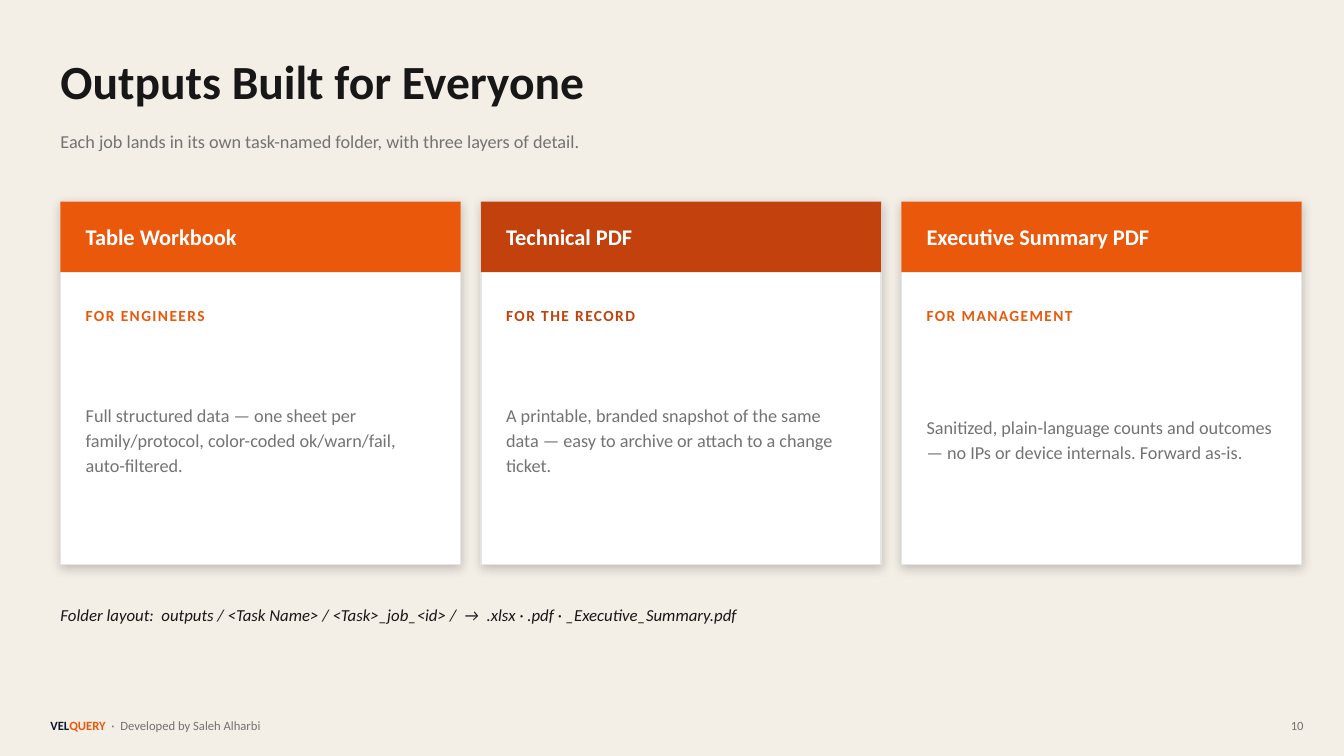
from pptx import Presentation
from pptx.dml.color import RGBColor
from pptx.enum.shapes import MSO_SHAPE
from pptx.enum.text import MSO_ANCHOR, MSO_AUTO_SIZE, PP_ALIGN
from pptx.oxml import parse_xml
from pptx.oxml.ns import nsdecls
from pptx.util import Emu, Pt

PX = 9144  # 100 px to the inch
FONT = "Calibri"
COLORS = {
    "page": "F3EEE6", "ink": "171717", "grey": "737373", "white": "FFFFFF",
    "border": "E5E5E5", "orange": "EA580C", "rust": "C2410C", "navy": "0F172A",
}
SHADOW = (
    f'<a:outerShdw {nsdecls("a")} blurRad="{Pt(8)}" dist="{Pt(2)}" dir="5400000" '
    'algn="ctr" rotWithShape="0"><a:srgbClr val="000000"><a:alpha val="20000"/>'
    "</a:srgbClr></a:outerShdw>"
)

deck = Presentation()
deck.slide_width, deck.slide_height = Emu(1333 * PX), Emu(750 * PX)
page = deck.slides.add_slide(deck.slide_layouts[5])
page.background.fill.solid()
page.background.fill.fore_color.rgb = RGBColor.from_string(COLORS["page"])


def add_text(text, left, top, width, height, size, color="grey", box=None, bold=False,
             italic=False, align=PP_ALIGN.LEFT, line_spacing=None, tracking=None):
    """Write text, given as a string or as (text, color, bold) spans."""
    area = [Emu(length * PX) for length in (left, top, width, height)]
    if box is None:
        box = page.shapes.add_textbox(*area)
    box.left, box.top, box.width, box.height = area
    frame = box.text_frame
    frame.word_wrap = True
    frame.auto_size = MSO_AUTO_SIZE.NONE
    frame.vertical_anchor = MSO_ANCHOR.MIDDLE
    frame.margin_left = frame.margin_top = frame.margin_right = frame.margin_bottom = 0
    para = frame.paragraphs[0]
    para.alignment = align
    if line_spacing:
        para.line_spacing = line_spacing
    spans = [(text, color, bold)] if isinstance(text, str) else text
    for words, span_color, span_bold in spans:
        span = para.add_run()
        span.text = words
        span.font.name = FONT
        span.font.size = Pt(size)
        span.font.bold = span_bold
        span.font.italic = italic
        span.font.color.rgb = RGBColor.from_string(COLORS[span_color])
        if tracking:
            span.font._element.set("spc", str(tracking))


def add_panel(left, top, width, height, fill, border=None):
    """Draw a rectangle; a bordered one also casts a soft shadow."""
    panel = page.shapes.add_shape(
        MSO_SHAPE.RECTANGLE, *[Emu(length * PX) for length in (left, top, width, height)])
    panel.shadow.inherit = False
    panel.fill.solid()
    panel.fill.fore_color.rgb = RGBColor.from_string(COLORS[fill])
    if border:
        panel.line.color.rgb = RGBColor.from_string(COLORS[border])
        panel.line.width = Pt(1)
        panel._element.spPr.find("{*}effectLst").append(parse_xml(SHADOW))
    else:
        panel.line.fill.background()


# Heading
add_text("Outputs Built for Everyone", 60, 45, 1100, 70, 34, "ink",
         box=page.shapes.title, bold=True)
add_text("Each job lands in its own task-named folder, with three layers of detail.",
         60, 120, 1100, 40, 13)

# Output cards
CARD_WIDTH, GAP, PADDING = 397, 20, 25
cards = [
    ("Table Workbook", "FOR ENGINEERS", "orange",
     "Full structured data — one sheet per family/protocol, color-coded ok/warn/fail, "
     "auto-filtered."),
    ("Technical PDF", "FOR THE RECORD", "rust",
     "A printable, branded snapshot of the same data — easy to archive or attach to a "
     "change ticket."),
    ("Executive Summary PDF", "FOR MANAGEMENT", "orange",
     "Sanitized, plain-language counts and outcomes — no IPs or device internals. "
     "Forward as-is."),
]
for index, (name, audience, accent, detail) in enumerate(cards):
    left = 60 + index * (CARD_WIDTH + GAP)
    text_left, text_width = left + PADDING, CARD_WIDTH - 2 * PADDING
    add_panel(left, 200, CARD_WIDTH, 360, "white", border="border")
    add_panel(left, 200, CARD_WIDTH, 70, accent)
    add_text(name, text_left, 200, text_width, 70, 16, "white", bold=True)
    add_text(audience, text_left, 295, text_width, 35, 11, accent, bold=True, tracking=100)
    add_text(detail, text_left, 335, text_width, 200, 13, line_spacing=1.15)

# Folder layout
add_text("Folder layout:  outputs / <Task Name> / <Task>_job_<id> /  →  "
         ".xlsx · .pdf · _Executive_Summary.pdf",
         60, 590, 1210, 40, 12, "ink", italic=True)

# Footer
add_text([("VEL", "navy", True), ("QUERY", "orange", True),
          ("  ·  Developed by Saleh Alharbi", "grey", False)], 50, 705, 1000, 30, 9)
add_text("10", 1243, 705, 50, 30, 9, align=PP_ALIGN.RIGHT)

deck.save("out.pptx")
